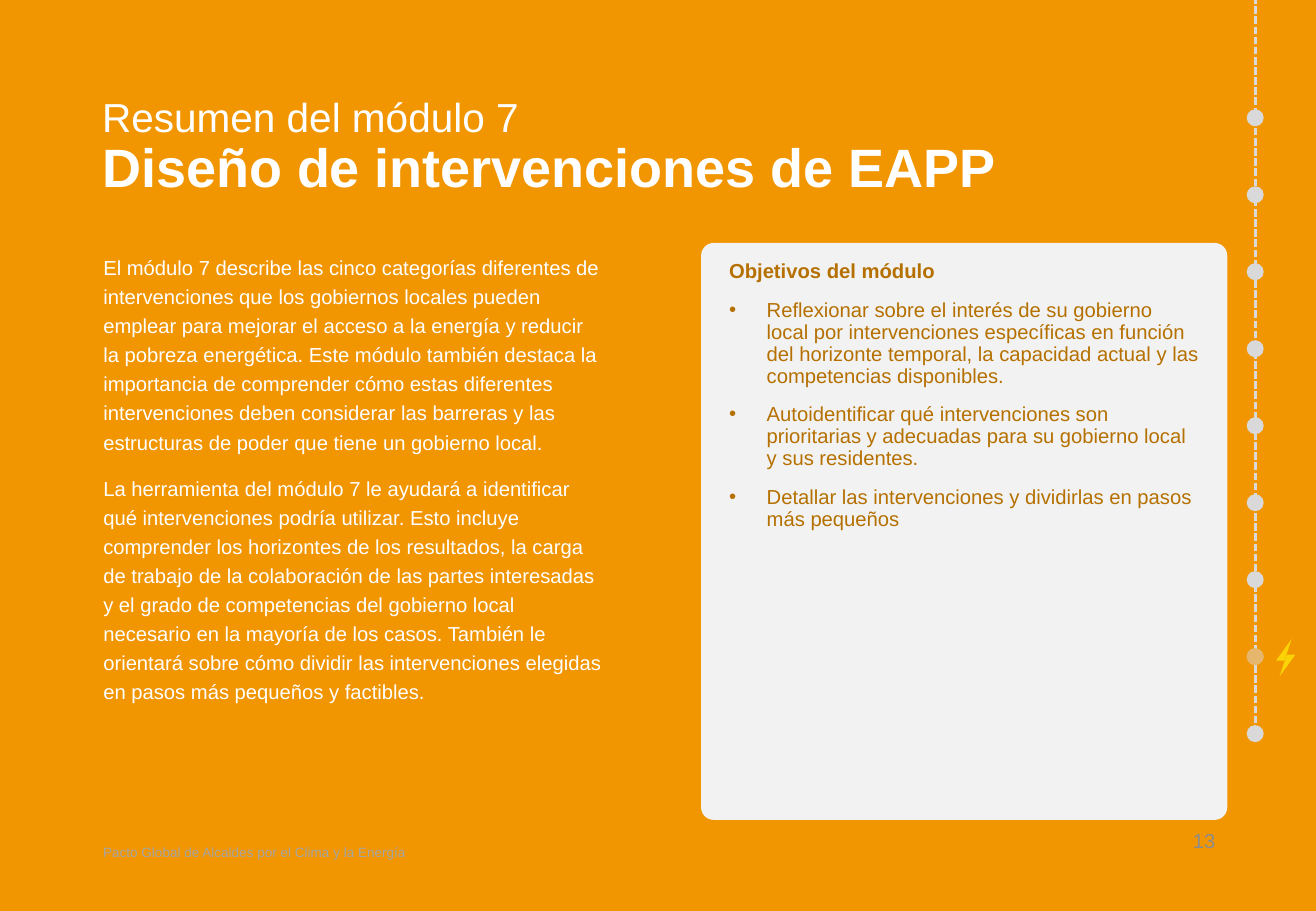
from dataclasses import dataclass

from lxml.etree import SubElement
from pptx import Presentation
from pptx.dml.color import RGBColor
from pptx.enum.dml import MSO_LINE
from pptx.enum.shapes import MSO_CONNECTOR, MSO_SHAPE
from pptx.enum.text import MSO_ANCHOR, MSO_AUTO_SIZE, PP_ALIGN
from pptx.oxml.ns import qn
from pptx.util import Inches, Pt


@dataclass(frozen=True)
class Theme:
    font: str = "Arial"
    orange: str = "F19500"
    brown: str = "B57000"
    white: str = "FFFFFF"
    panel: str = "F2F2F2"
    track: str = "D9D9D9"
    bolt: str = "FAD307"
    footer: str = "A6A6A6"
    number: str = "8C8C8C"
    heading_size: int = 32
    lead_size: int = 24
    text_size: int = 12
    footer_size: int = 8


theme = Theme()


def add_span(para, text, size, color, bold=False):
    span = para.add_run()
    span.text = text
    span.font.name = theme.font
    span.font.size = Pt(size)
    span.font.bold = bold
    span.font.color.rgb = RGBColor.from_string(color)


def add_body_paragraph(frame, text, color, spacing, bold=False, bullet=False):
    """Fill the first paragraph if it is empty, otherwise add one below."""
    first = not frame.text
    para = frame.paragraphs[0] if first else frame.add_paragraph()
    para.line_spacing = spacing
    para.space_before = Pt(0 if first else 10)
    para.space_after = Pt(0)
    properties = para._p.get_or_add_pPr()
    indent = Inches(0.31) if bullet else 0
    properties.set("marL", str(indent))
    properties.set("indent", str(-indent))
    if bullet:
        SubElement(properties, qn("a:buChar")).set("char", "•")
    else:
        SubElement(properties, qn("a:buNone"))
    add_span(para, text, theme.text_size, color, bold)


deck = Presentation()
deck.slide_width, deck.slide_height = Inches(10.83), Inches(7.5)
page = deck.slides.add_slide(deck.slide_layouts.get_by_name("Two Content"))
page.background.fill.solid()
page.background.fill.fore_color.rgb = RGBColor.from_string(theme.orange)
shapes = page.shapes
title, summary, goals = page.placeholders

# Placeholders
for box, place in [
    (title, (0.74, 0.75, 9.36, 1.08)),
    (summary, (0.75, 2.01, 4.33, 4.76)),
    (goals, (5.77, 2, 4.33, 4.75)),
]:
    box.left, box.top, box.width, box.height = map(Inches, place)
    box.text_frame.auto_size = MSO_AUTO_SIZE.NONE
    box.text_frame.vertical_anchor = MSO_ANCHOR.TOP

# Title
para = title.text_frame.paragraphs[0]
para.alignment = PP_ALIGN.LEFT
para.line_spacing = 0.9
add_span(para, "Resumen del módulo 7", theme.lead_size, theme.white)
para.add_line_break()
line_break = para._p.find(qn("a:br"))
SubElement(line_break, qn("a:rPr")).set("sz", str(theme.lead_size * 100))
add_span(para, "Diseño de intervenciones de EAPP", theme.heading_size, theme.white, bold=True)

# Summary
for text in [
    "El módulo 7 describe las cinco categorías diferentes de intervenciones que los "
    "gobiernos locales pueden emplear para mejorar el acceso a la energía y reducir la "
    "pobreza energética. Este módulo también destaca la importancia de comprender cómo "
    "estas diferentes intervenciones deben considerar las barreras y las estructuras de "
    "poder que tiene un gobierno local.",
    "La herramienta del módulo 7 le ayudará a identificar qué intervenciones podría "
    "utilizar. Esto incluye comprender los horizontes de los resultados, la carga de "
    "trabajo de la colaboración de las partes interesadas y el grado de competencias del "
    "gobierno local necesario en la mayoría de los casos. También le orientará sobre cómo "
    "dividir las intervenciones elegidas en pasos más pequeños y factibles.",
]:
    add_body_paragraph(summary.text_frame, text, theme.white, 1.2)

# Goals panel
geometry = SubElement(goals._element.spPr, qn("a:prstGeom"), prst="roundRect")
adjustments = SubElement(geometry, qn("a:avLst"))
SubElement(adjustments, qn("a:gd"), name="adj", fmla="val 2400")
goals.fill.solid()
goals.fill.fore_color.rgb = RGBColor.from_string(theme.panel)
frame = goals.text_frame
frame.margin_left = frame.margin_right = Inches(0.2)
frame.margin_top = frame.margin_bottom = Inches(0.12)
add_body_paragraph(frame, "Objetivos del módulo", theme.brown, 0.9, bold=True)
for text in [
    "Reflexionar sobre el interés de su gobierno local por intervenciones específicas en "
    "función del horizonte temporal, la capacidad actual y las competencias disponibles.",
    "Autoidentificar qué intervenciones son prioritarias y adecuadas para su gobierno "
    "local y sus residentes.",
    "Detallar las intervenciones y dividirlas en pasos más pequeños",
]:
    add_body_paragraph(frame, text, theme.brown, 0.9, bullet=True)

# Footer and page number
for text, left, width, margin_top, align, size, color in [
    ("Pacto Global de Alcaldes por el Clima y la Energía",
     0.75, 3.01, 0.18, PP_ALIGN.LEFT, theme.footer_size, theme.footer),
    ("13", 9.58, 0.52, 0.05, PP_ALIGN.RIGHT, theme.text_size, theme.number),
]:
    box = shapes.add_textbox(Inches(left), Inches(6.77), Inches(width), Inches(0.4))
    box.text_frame.word_wrap = True
    box.text_frame.margin_top = Inches(margin_top)
    para = box.text_frame.paragraphs[0]
    para.alignment = align
    add_span(para, text, size, color)

# Progress track: nine modules, the eighth one is current
track = shapes.add_connector(
    MSO_CONNECTOR.STRAIGHT, Inches(10.33), Inches(6.04), Inches(10.33), 0)
track.line.color.rgb = RGBColor.from_string(theme.track)
track.line.width = Pt(1.5)
track.line.dash_style = MSO_LINE.SQUARE_DOT
SubElement(track._element.spPr, qn("a:effectLst"))

first_dot, last_dot, dot_count, current = 0.9, 5.97, 9, 7
dot_step = (last_dot - first_dot) / (dot_count - 1)
dots = [(index, theme.track) for index in range(dot_count)] + [(current, theme.orange)]
for index, color in dots:
    dot = shapes.add_shape(
        MSO_SHAPE.OVAL, Inches(10.26), Inches(first_dot + index * dot_step),
        Inches(0.14), Inches(0.14))
    dot.shadow.inherit = False
    dot.fill.solid()
    dot.fill.fore_color.rgb = RGBColor.from_string(color)
    dot.line.fill.background()
# The current module's overlay is half transparent
overlay_color = dot._element.spPr.find(qn("a:solidFill"))[0]
SubElement(overlay_color, qn("a:alpha")).set("val", "50000")

# Lightning bolt: one half, then the same half turned around the centre
upper_half = [(10.57, 5.44), (10.5, 5.44), (10.63, 5.26), (10.58, 5.41)]
lower_half = [(2 * 10.58 - x, 2 * 5.415 - y) for x, y in upper_half]
for half in (upper_half, lower_half):
    start, *others = [(Inches(x), Inches(y)) for x, y in half]
    builder = shapes.build_freeform(*start)
    builder.add_line_segments(others, close=True)
    bolt = builder.convert_to_shape()
    bolt.shadow.inherit = False
    bolt.fill.solid()
    bolt.fill.fore_color.rgb = RGBColor.from_string(theme.bolt)
    bolt.line.fill.background()

deck.save("out.pptx")
